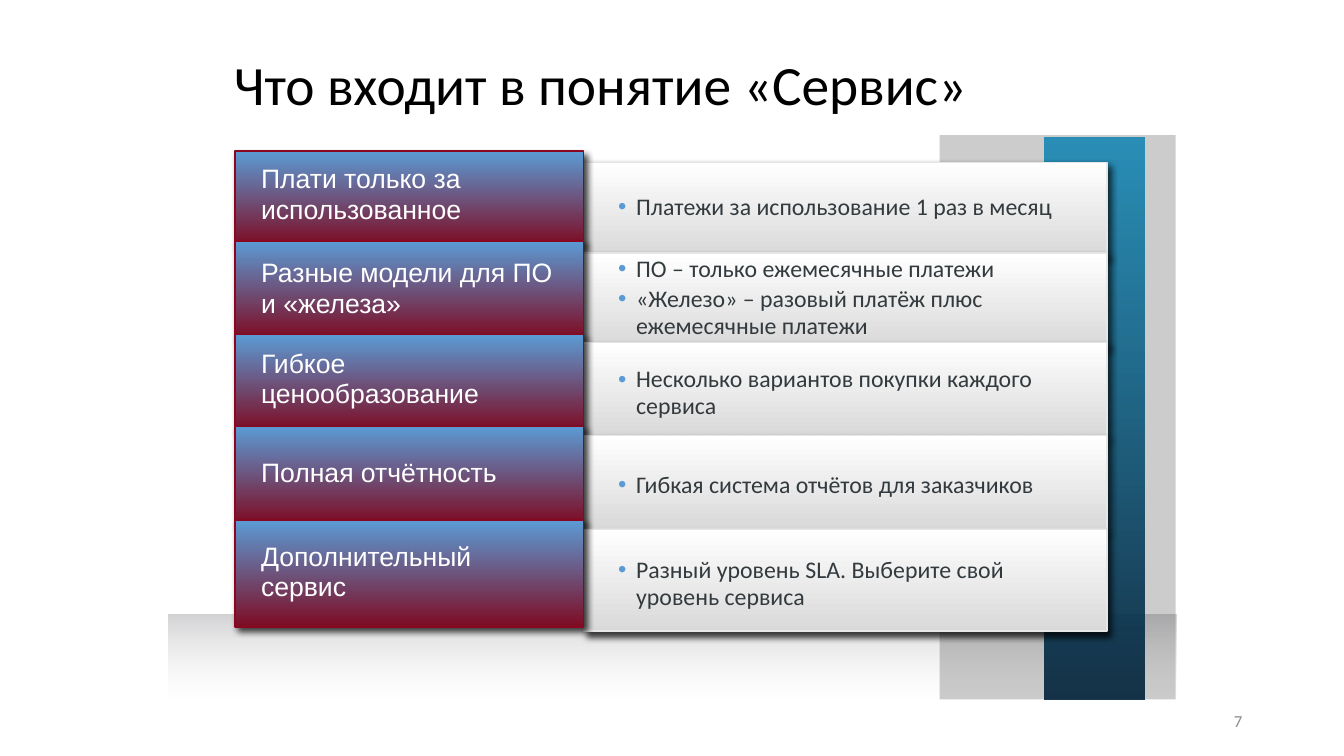
from lxml import etree
from pptx import Presentation
from pptx.dml.color import RGBColor
from pptx.enum.shapes import MSO_SHAPE
from pptx.enum.text import MSO_ANCHOR, PP_ALIGN
from pptx.oxml import parse_xml
from pptx.oxml.ns import nsdecls, qn
from pptx.util import Inches, Pt

RECTANGLE = MSO_SHAPE.RECTANGLE
MIDDLE = MSO_ANCHOR.MIDDLE
LEFT = PP_ALIGN.LEFT
RIGHT = PP_ALIGN.RIGHT
BLANK_LAYOUT = 6

COLORS = {
    "black": "000000",
    "white": "FFFFFF",
    "number": "8C8C8C",
    "floor_top": "9D9DA1",
    "floor_bottom": "E0E1E1",
    "pillar_top": "009FDE",
    "pillar_bottom": "002947",
    "panel_bottom": "D9D9D9",
    "panel_line": "E7E6E6",
    "blue": "5B9BD5",
    "wine": "7E0C24",
    "label_line": "890721",
    "bullet_text": "333A3E",
}

LABEL_LEFT, LABEL_WIDTH = 2.33, 3.46
PANEL_LEFT, PANEL_WIDTH = 5.79, 5.19

# Each row: panel (top, height), label (top, height), label text box, bullet text box
ROWS = [
    ((1.61, 0.93), (1.5, 0.93), (1.73, 2.68, 0.41), (1.85, 0.41),
     "Плати только за использованное",
     ["Платежи за использование 1 раз в месяц"]),
    ((2.51, 0.93), (2.39, 0.96), (2.66, 3.37, 0.41), (2.51, 0.89),
     "Разные модели для ПО и «железа»",
     ["ПО – только ежемесячные платежи",
      "«Железо» – разовый платёж плюс ежемесячные платежи"]),
    ((3.4, 0.93), (3.32, 0.95), (3.56, 3.37, 0.41), (3.65, 0.5),
     "Гибкое ценообразование",
     ["Несколько вариантов покупки каждого сервиса"]),
    ((4.32, 0.93), (4.23, 0.96), (4.49, 3.37, 0.41), (4.52, 0.59),
     "Полная отчётность",
     ["Гибкая система отчётов для заказчиков"]),
    ((5.25, 1.01), (5.16, 1.06), (5.46, 3.37, 0.44), (5.57, 0.44),
     "Дополнительный сервис",
     ["Разный уровень SLA. Выберите свой уровень сервиса"]),
]


def color_xml(name, alpha):
    return (f'<a:srgbClr val="{COLORS[name]}">'
            f'<a:alpha val="{alpha * 1000}"/></a:srgbClr>')


def add_gradient_box(shapes, place, top_stop, bottom_stop, line=None):
    box = shapes.add_shape(RECTANGLE, *map(Inches, place))
    box.shadow.inherit = False
    box.fill.background()
    stops = "".join(
        f'<a:gs pos="{position}">{color_xml(*stop)}</a:gs>'
        for position, stop in ((0, top_stop), (100000, bottom_stop)))
    gradient = parse_xml(
        f'<a:gradFill {nsdecls("a")} rotWithShape="1"><a:gsLst>{stops}</a:gsLst>'
        '<a:lin ang="5400000" scaled="0"/></a:gradFill>')
    properties = box.fill._xPr
    properties.replace(properties.find(qn("a:noFill")), gradient)
    if line:
        box.line.color.rgb = RGBColor.from_string(COLORS[line])
        box.line.width = Pt(1)
    else:
        box.line.fill.background()
    return box


def add_shadow(box):
    effects = box.fill._xPr.find(qn("a:effectLst"))
    effects.append(parse_xml(
        f'<a:outerShdw {nsdecls("a")} blurRad="{Pt(5)}" dist="{Pt(3.8)}" '
        f'dir="{56 * 60000}" algn="tl" rotWithShape="0">'
        f'{color_xml("black", 75)}</a:outerShdw>'))


def add_bullet(para):
    properties = para._p.get_or_add_pPr()
    properties.set("marL", str(Inches(0.18)))
    properties.set("indent", str(Inches(-0.18)))
    color = etree.SubElement(properties, qn("a:buClr"))
    etree.SubElement(color, qn("a:srgbClr"), val=COLORS["blue"])
    etree.SubElement(properties, qn("a:buFont"), typeface="Arial")
    etree.SubElement(properties, qn("a:buChar"), char="•")


def add_text(shapes, place, lines, size, font, color, inset=0.1,
             align=LEFT, line_spacing=1.0, space_before=0, bullets=False):
    frame = shapes.add_textbox(*map(Inches, place)).text_frame
    frame.word_wrap = True
    frame.vertical_anchor = MIDDLE
    frame.margin_left = frame.margin_right = Inches(inset)
    frame.margin_top = frame.margin_bottom = Inches(0.05)
    for index, line in enumerate(lines):
        para = frame.add_paragraph() if index else frame.paragraphs[0]
        para.alignment = align
        para.line_spacing = line_spacing
        para.space_before = Pt(space_before)
        if bullets:
            add_bullet(para)
        span = para.add_run()
        span.text = line
        span.font.size = Pt(size)
        span.font.name = font
        span.font.color.rgb = RGBColor.from_string(COLORS[color])


def add_backdrop(page):
    add_gradient_box(page.shapes, (1.67, 6.1, 10, 0.84),
                     ("floor_top", 45), ("floor_bottom", 0))
    add_gradient_box(page.shapes, (10.36, 1.36, 0.99, 5.58),
                     ("pillar_top", 80), ("pillar_bottom", 90))
    add_gradient_box(page.shapes, (9.32, 1.34, 2.34, 5.6),
                     ("black", 20), ("black", 20))


def add_row(page, panel, label, label_text, bullet_text, heading, points):
    shapes = page.shapes.add_group_shape().shapes
    add_shadow(add_gradient_box(
        shapes, (PANEL_LEFT, panel[0], PANEL_WIDTH, panel[1]),
        ("white", 100), ("panel_bottom", 100), "panel_line"))
    add_text(shapes, (5.98, bullet_text[0], 4.9, bullet_text[1]), points,
             17, "Calibri", "bullet_text", inset=0.15, line_spacing=0.95,
             space_before=2, bullets=True)
    add_shadow(add_gradient_box(
        shapes, (LABEL_LEFT, label[0], LABEL_WIDTH, label[1]),
        ("blue", 100), ("wine", 100), "label_line"))
    add_text(shapes, (2.39, *label_text), [heading], 19, "Arial", "white",
             inset=0.2, line_spacing=0.95, space_before=2)


def main():
    deck = Presentation()
    deck.slide_width = Inches(13.33)
    deck.slide_height = Inches(7.5)
    page = deck.slides.add_slide(deck.slide_layouts[BLANK_LAYOUT])
    add_backdrop(page)
    add_text(page.shapes, (2.22, 0.4, 8.02, 0.94),
             ["Что входит в понятие «Сервис»"], 39.6, "Calibri", "black",
             line_spacing=0.9)
    add_text(page.shapes, (9.42, 6.95, 3, 0.4), ["7"], 12, "Calibri",
             "number", align=RIGHT)
    for row in ROWS:
        add_row(page, *row)
    deck.save("out.pptx")


if __name__ == "__main__":
    main()
